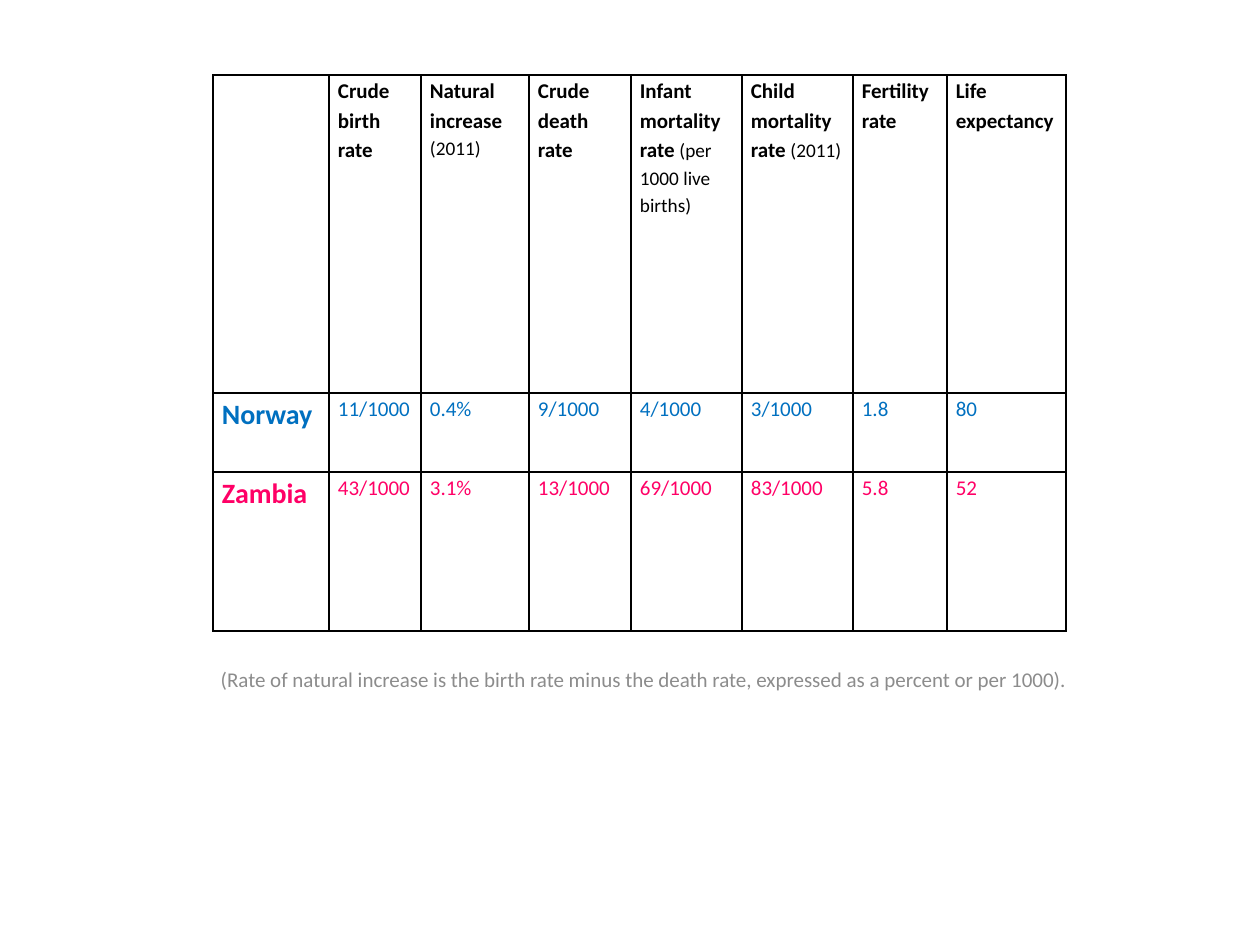
from dataclasses import dataclass

from lxml.etree import SubElement
from pptx import Presentation
from pptx.dml.color import RGBColor
from pptx.enum.text import MSO_ANCHOR, PP_ALIGN
from pptx.oxml.ns import qn
from pptx.util import Emu, Pt


@dataclass(frozen=True)
class Theme:
    font: str = "Calibri"
    black: str = "000000"
    blue: str = "0070C0"
    pink: str = "FF0066"
    grey: str = "8C8C8C"
    country_size: int = 16
    body_size: int = 12
    detail_size: int = 11
    line_spacing: float = 1.15


THEME = Theme()

# Content: each heading is a list of lines, each line a (bold, detail) pair
HEADINGS = [
    [("Crude birth rate", "")],
    [("Natural increase", ""), ("", "(2011)")],
    [("Crude death rate", "")],
    [("Infant mortality rate ", "(per 1000 live births)")],
    [("Child mortality rate ", "(2011)")],
    [("Fertility rate", "")],
    [("Life expectancy", "")],
]
COUNTRIES = [
    ("Norway", THEME.blue,
     ["11/1000", "0.4%", "9/1000", "4/1000", "3/1000", "1.8", "80"]),
    ("Zambia", THEME.pink,
     ["43/1000", "3.1%", "13/1000", "69/1000", "83/1000", "5.8", "52"]),
]
CAPTION = ("(Rate of natural increase is the birth rate minus the death rate, "
           "expressed as a percent or per 1000).")

# Layout in px
SLIDE = (1260, 945)
TABLE_LEFT, TABLE_TOP = 213, 75
COLUMNS = [116, 92, 108, 102, 111, 111, 94, 119]
ROWS = [318, 79, 159]
CELL_INSET = 9
CAPTION_BOX = (203, 661, 882, 36)


def px(length):
    return Emu(round(length * 914400 / 126))


def add_run(paragraph, text, size, color, bold=False):
    run = paragraph.add_run()
    run.text = text
    run.font.name = THEME.font
    run.font.size = Pt(size)
    run.font.bold = bold
    run.font.color.rgb = RGBColor.from_string(color)


def style_cell(cell):
    cell.margin_left = cell.margin_right = px(CELL_INSET)
    cell.margin_top = cell.margin_bottom = 0
    cell_properties = cell._tc.get_or_add_tcPr()
    for side in ("a:lnL", "a:lnR", "a:lnT", "a:lnB"):
        border = SubElement(cell_properties, qn(side), w=str(Pt(1)))
        fill = SubElement(border, qn("a:solidFill"))
        SubElement(fill, qn("a:srgbClr"), val=THEME.black)
    cell.fill.background()


def fill_cell(cell, lines):
    """Write lines, each a list of (text, size, color, bold) runs."""
    for index, runs in enumerate(lines):
        frame = cell.text_frame
        paragraph = frame.add_paragraph() if index else frame.paragraphs[0]
        paragraph.line_spacing = THEME.line_spacing
        for run in runs:
            add_run(paragraph, *run)


def add_statistics(slide):
    table = slide.shapes.add_table(
        len(ROWS), len(COLUMNS), px(TABLE_LEFT), px(TABLE_TOP),
        px(sum(COLUMNS)), px(sum(ROWS))).table
    table.first_row = table.horz_banding = False
    for column, width in zip(table.columns, COLUMNS):
        column.width = px(width)
    for row, height in zip(table.rows, ROWS):
        row.height = px(height)
    for cell in table.iter_cells():
        style_cell(cell)

    # Heading row
    for column, heading in enumerate(HEADINGS, 1):
        lines = []
        for title, detail in heading:
            runs = [(title, THEME.body_size, THEME.black, True),
                    (detail, THEME.detail_size, THEME.black, False)]
            lines.append([run for run in runs if run[0]])
        fill_cell(table.cell(0, column), lines)

    # Country rows
    for row, (country, color, values) in enumerate(COUNTRIES, 1):
        fill_cell(table.cell(row, 0),
                  [[(country, THEME.country_size, color, True)]])
        for column, value in enumerate(values, 1):
            fill_cell(table.cell(row, column),
                      [[(value, THEME.body_size, color, False)]])


def add_caption(slide):
    frame = slide.shapes.add_textbox(*map(px, CAPTION_BOX)).text_frame
    frame.word_wrap = True
    frame.vertical_anchor = MSO_ANCHOR.MIDDLE
    paragraph = frame.paragraphs[0]
    paragraph.alignment = PP_ALIGN.CENTER
    add_run(paragraph, CAPTION, THEME.body_size, THEME.grey)


def main():
    presentation = Presentation()
    presentation.slide_width, presentation.slide_height = map(px, SLIDE)
    slide = presentation.slides.add_slide(presentation.slide_layouts[6])
    add_statistics(slide)
    add_caption(slide)
    presentation.save("out.pptx")


if __name__ == "__main__":
    main()
